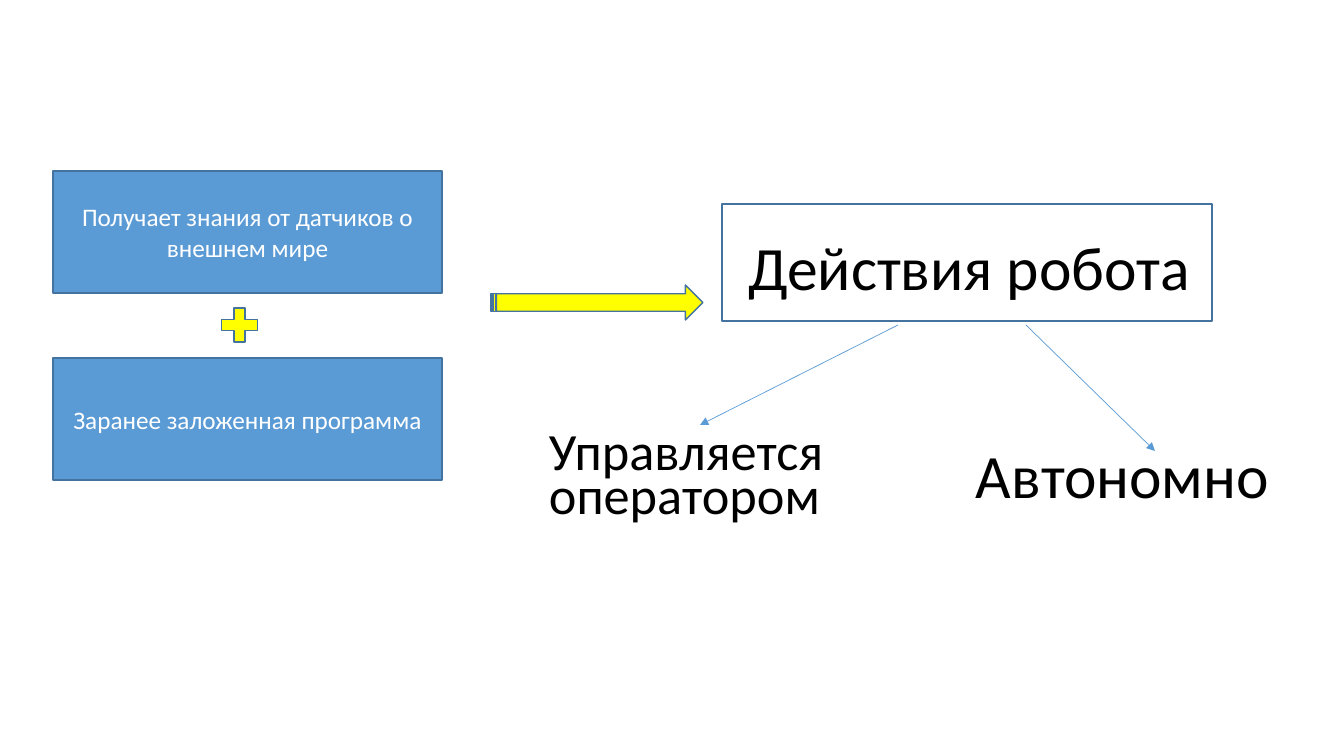
"""Build a slide on where a robot's actions come from and who controls them."""
import pptx
import pptx.util
import pptx.dml.color
import pptx.enum.shapes
import pptx.enum.text
from lxml import etree

TITLE = ("Действия робота", (738, 217, 494, 108))
MODES = [
    ("Управляется оператором", 539, 37.4, 0.7),
    ("Автономно", 966, 44, 0.9),
]
INPUTS = ["Получает знания от датчиков о внешнем мире", "Заранее заложенная программа"]
ARROWS = [(898, 325, 700, 425), (1026, 325, 1155, 451)]
COLORS = {"blue": "5B9BD5", "edge": "43739E", "yellow": "FFFF00", "black": "000000", "white": "FFFFFF"}
FONT = "Calibri"
SCALE = 914400 / 100.8
KIND = pptx.enum.shapes.MSO_SHAPE
ALIGN = pptx.enum.text.PP_ALIGN


def px(*nums):
    return [pptx.util.Emu(round(n * SCALE)) for n in nums]


def color(name):
    return pptx.dml.color.RGBColor.from_string(COLORS[name])


def write(shape, text, size=18, ink="black", align=ALIGN.LEFT, space=None):
    frame = shape.text_frame
    frame.word_wrap = True
    frame.auto_size = pptx.enum.text.MSO_AUTO_SIZE.NONE
    frame.vertical_anchor = pptx.enum.text.MSO_ANCHOR.MIDDLE
    frame.text = text
    para = frame.paragraphs[0]
    para.alignment = align
    para.line_spacing = space
    font = para.runs[0].font
    font.name, font.size = FONT, pptx.util.Pt(size)
    font.color.rgb = color(ink)


def draw(slide, kind, box, fill=None):
    shape = slide.shapes.add_shape(kind, *px(*box))
    shape.shadow.inherit = False
    if fill:
        shape.fill.solid()
        shape.fill.fore_color.rgb = color(fill)
    else:
        shape.fill.background()
    shape.line.color.rgb = color("edge")
    shape.line.width = pptx.util.Pt(1)
    return shape


def link(slide, ends):
    line = slide.shapes.add_connector(pptx.enum.shapes.MSO_CONNECTOR.STRAIGHT, *px(*ends))
    line.line.color.rgb = color("blue")
    line.line.width = pptx.util.Pt(0.5)
    space = pptx.oxml.ns.qn
    etree.SubElement(line.line._get_or_add_ln(), space("a:tailEnd"), type="triangle")
    etree.SubElement(line._element.spPr, space("a:effectLst"))


def main():
    deck = pptx.Presentation()
    deck.slide_width, deck.slide_height = px(1344, 756)
    slide = deck.slides.add_slide(deck.slide_layouts[5])

    text, box = TITLE
    title = slide.shapes.title
    title.left, title.top, title.width, title.height = px(*box)
    write(title, text, size=44, space=0.9)

    for text, left, size, space in MODES:
        label = slide.shapes.add_textbox(*px(left, 425, 321, 108))
        write(label, text, size=size, space=space)
    for ends in ARROWS:
        link(slide, ends)
    for i, text in enumerate(INPUTS):
        card = draw(slide, KIND.RECTANGLE, (53, 171 + 187 * i, 389, 122), "blue")
        write(card, text, ink="white", align=ALIGN.CENTER)

    draw(slide, KIND.MATH_PLUS, (215, 302, 49, 46), "yellow")
    draw(slide, KIND.STRIPED_RIGHT_ARROW, (491, 285, 212, 35), "yellow")
    draw(slide, KIND.RECTANGLE, (722, 204, 490, 117))
    deck.save("out.pptx")


if __name__ == "__main__":
    main()
